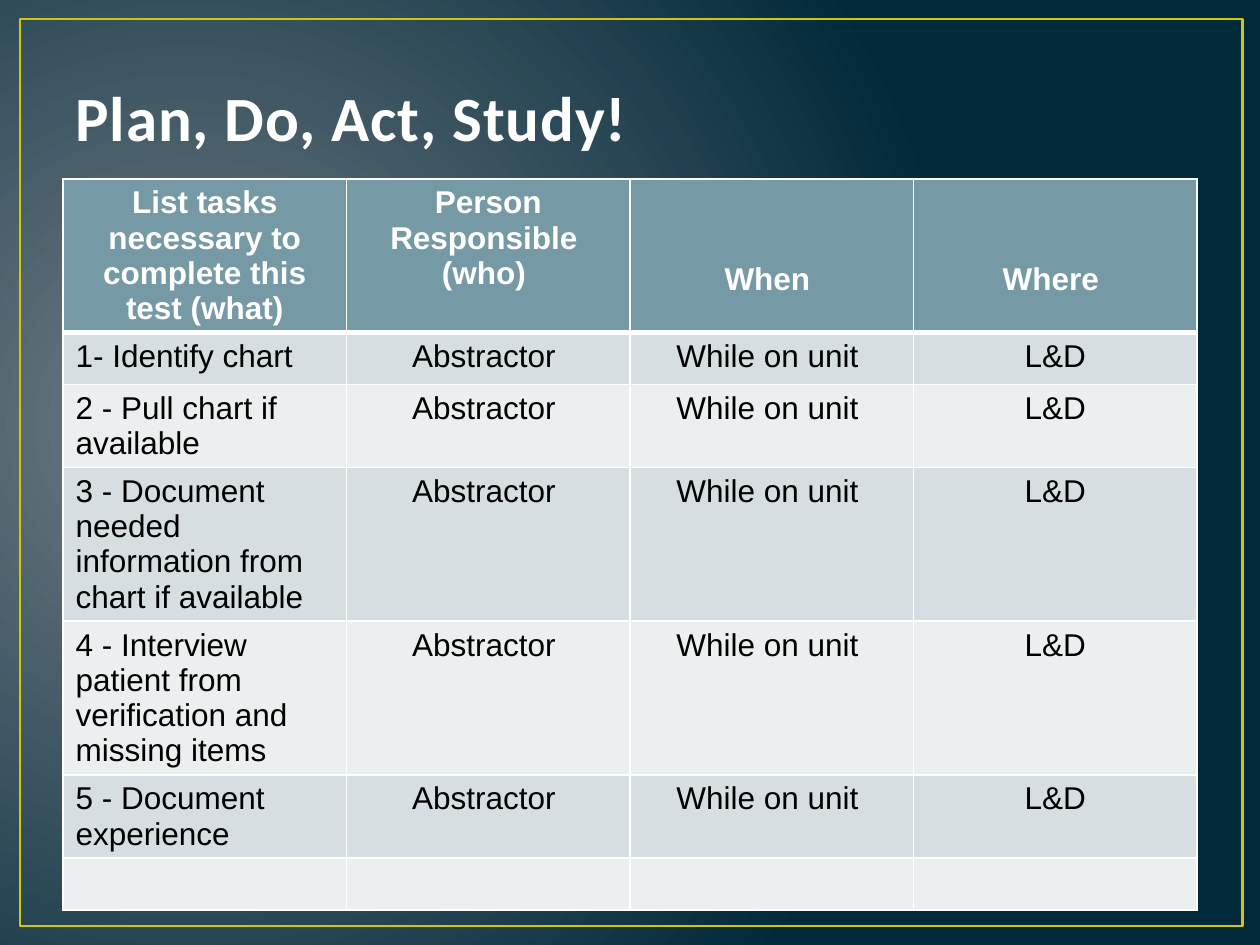
from lxml.etree import SubElement
from pptx import Presentation
from pptx.dml.color import RGBColor as RGB
from pptx.enum.shapes import MSO_SHAPE as SHAPE
from pptx.enum.text import MSO_ANCHOR as ANCHOR, PP_ALIGN as ALIGN
from pptx.oxml import parse_xml
from pptx.oxml.ns import nsdecls, qn
from pptx.util import Inches, Pt

COLORS = {"glow": "717C84", "deep": "01293A", "frame": "CFC60D", "title": "FEFEFE",
          "white": "FFFFFF", "black": "000000", "header": "759AA5",
          "odd": "D6DEE1", "even": "ECEFF0"}
HEADERS = ["List tasks necessary to complete this test (what)",
           "Person\nResponsible \n(who) ", "When ", "Where "]
TASKS = ["1- Identify chart", "2 - Pull chart if available",
         "3 - Document needed information from chart if available",
         "4 - Interview patient from verification and missing items",
         "5 - Document experience"]
ROWS = [HEADERS] + [[t, "Abstractor ", "While on unit ", "L&D"] for t in TASKS] + [[""] * 4]
COL_W, ROW_H = Inches(2.25), Inches(0.41)


def format_font(font, color, **values):
    font.color.rgb = RGB.from_string(COLORS[color])
    for name, value in values.items():
        setattr(font, name, value)


def add_border(cell, side, width):
    ln = SubElement(cell._tc.get_or_add_tcPr(), qn(f"a:ln{side}"), w=str(Pt(width)))
    fill = SubElement(ln, qn("a:solidFill"))
    SubElement(fill, qn("a:srgbClr"), val=COLORS["white"])


prs = Presentation()
prs.slide_width, prs.slide_height = Inches(10), Inches(7.5)
s = prs.slides.add_slide(prs.slide_layouts[5])

# Background: circular glow from the left
bg = s.background.fill
bg.gradient()
for stop, name in zip(bg.gradient_stops, ("glow", "deep")):
    stop.color.rgb = RGB.from_string(COLORS[name])
grad = s.background._cSld.find(".//" + qn("a:gradFill"))
grad.replace(grad.find(qn("a:lin")), parse_xml(
    f'<a:path {nsdecls("a")} path="circle">'
    '<a:fillToRect l="15000" t="50000" r="85000" b="60000"/></a:path>'))

# Frame, behind everything else
frame = s.shapes.add_shape(SHAPE.RECTANGLE, Inches(0.16), Inches(0.15), Inches(9.7), Inches(7.2))
frame.shadow.inherit = False
frame.fill.background()
frame.line.color.rgb = RGB.from_string(COLORS["frame"])
frame.line.width = Pt(1.5)
s.shapes._spTree.insert(2, frame._element)

# Title
title = s.shapes.title
title.left, title.top, title.width, title.height = (Inches(v) for v in (0.5, 0.02, 9, 1.25))
tf = title.text_frame
tf.vertical_anchor = ANCHOR.BOTTOM
p = tf.paragraphs[0]
p.alignment = ALIGN.LEFT
r = p.add_run()
r.text = "Plan, Do, Act, Study!"
format_font(r.font, "title", name="Calibri", size=Pt(36), bold=True)
r.font._element.set("spc", "50")

# Task table: rows grow with their text
table = s.shapes.add_table(len(ROWS), 4, Inches(0.5), Inches(1.42),
                           COL_W * 4, ROW_H * len(ROWS)).table
for col in table.columns:
    col.width = COL_W
for i, texts in enumerate(ROWS):
    table.rows[i].height = ROW_H
    is_header = i == 0
    fill = "header" if is_header else ("odd" if i % 2 else "even")
    for j, text in enumerate(texts):
        cell = table.cell(i, j)
        for side in "LRTB":
            thick = (is_header and side == "B") or (i == 1 and side == "T")
            add_border(cell, side, 3 if thick else 1)
        cell.fill.solid()
        cell.fill.fore_color.rgb = RGB.from_string(COLORS[fill])
        if is_header and j > 1:
            cell.margin_top = Inches(0.66)
        cell.text = text
        for p in cell.text_frame.paragraphs:
            p.alignment = ALIGN.CENTER if is_header or j else ALIGN.LEFT
            for r in p.runs:
                format_font(r.font, "white" if is_header else "black",
                            name="Arial", size=Pt(18), bold=is_header)

prs.save("out.pptx")
